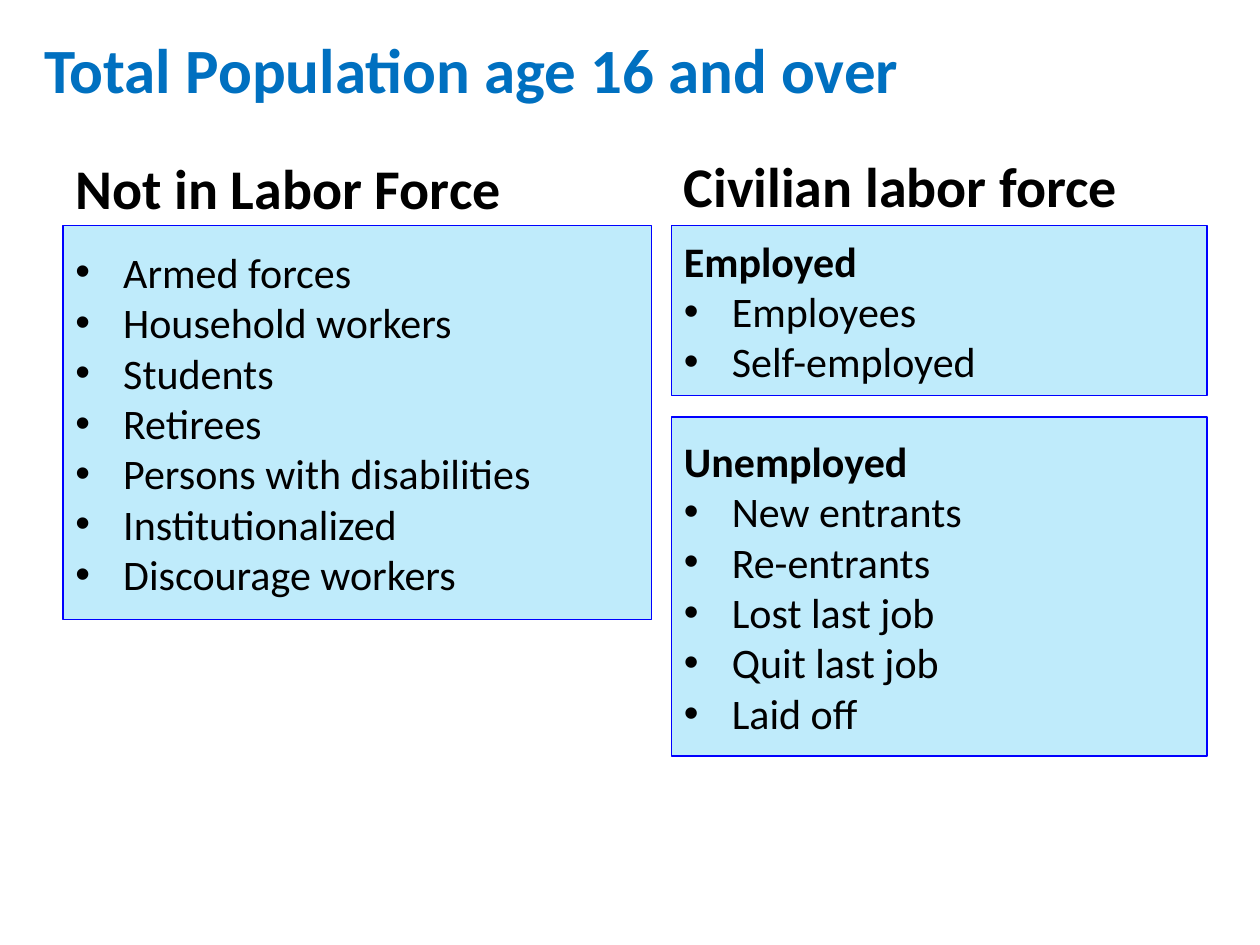
from lxml import etree
from pptx import Presentation
from pptx.dml.color import RGBColor
from pptx.enum import shapes, text
from pptx.oxml.ns import qn
from pptx.util import Inches, Pt

# Content
TITLE = "Total Population age 16 and over"
# Each column: left, width, heading, heading anchor, boxes of (height, subheading, items)
COLUMNS = [
    (0.5, 4.67, "Not in Labor Force", "TOP", [
        (3.13, None, ["Armed forces", "Household workers", "Students", "Retirees",
                      "Persons with disabilities", "Institutionalized",
                      "Discourage workers"]),
    ]),
    (5.33, 4.25, "Civilian labor force", "MIDDLE", [
        (1.35, "Employed", ["Employees", "Self-employed"]),
        (2.69, "Unemployed", ["New entrants", "Re-entrants", "Lost last job",
                              "Quit last job", "Laid off"]),
    ]),
]
COLORS = {"title": "0070C0", "text": "000000", "box": "00B0F0", "line": "0000FF"}
FONT = "Calibri"
HEAD_TOP, HEAD_HEIGHT, BOX_TOP, BOX_GAP = 1.17, 0.59, 1.79, 0.17
INDENT = Inches(0.38)


def rgb(name):
    return RGBColor.from_string(COLORS[name])


def write(p, words, size=24, bold=False, color="text", bullet=False):
    p.alignment = text.PP_ALIGN.LEFT
    p.space_before = Pt(0)
    r = p.add_run()
    r.text = words
    r.font.name, r.font.size, r.font.bold = FONT, Pt(size), bold
    r.font.color.rgb = rgb(color)
    if bullet:
        pPr = p._p.get_or_add_pPr()
        pPr.set("marL", str(INDENT))
        pPr.set("indent", str(-INDENT))
        etree.SubElement(pPr, qn("a:buFont")).set("typeface", "Arial")
        etree.SubElement(pPr, qn("a:buChar")).set("char", "•")


def set_frame(sp, anchor="MIDDLE"):
    tf = sp.text_frame
    tf.word_wrap = True
    tf.auto_size = text.MSO_AUTO_SIZE.SHAPE_TO_FIT_TEXT
    tf.vertical_anchor = text.MSO_ANCHOR[anchor]
    return tf


def add_box(s, left, top, width, height, subheading, items):
    sp = s.shapes.add_shape(shapes.MSO_SHAPE.RECTANGLE, Inches(left), Inches(top),
                            Inches(width), Inches(height))
    sp.shadow.inherit = False
    sp.fill.solid()
    sp.fill.fore_color.rgb = rgb("box")
    fill_color = sp._element.spPr.find(qn("a:solidFill"))[0]
    etree.SubElement(fill_color, qn("a:alpha")).set("val", "25000")
    sp.line.color.rgb = rgb("line")
    sp.line.width = Pt(0.75)
    tf = set_frame(sp)
    lines = [(subheading, {"bold": True})] if subheading else []
    lines += [(item, {"bullet": True}) for item in items]
    for i, (words, style) in enumerate(lines):
        write(tf.add_paragraph() if i else tf.paragraphs[0], words, **style)


def main():
    prs = Presentation()
    prs.slide_width, prs.slide_height = Inches(10), Inches(7.5)
    s = prs.slides.add_slide(prs.slide_layouts[5])

    # Title
    title = s.shapes.title
    title.left, title.top = Inches(0.25), Inches(0.22)
    title.width, title.height = Inches(8.25), Inches(0.65)
    write(set_frame(title).paragraphs[0], TITLE, size=36, bold=True, color="title")

    # Columns: a heading above stacked boxes
    for left, width, heading, anchor, boxes in COLUMNS:
        tb = s.shapes.add_textbox(Inches(left), Inches(HEAD_TOP),
                                  Inches(width), Inches(HEAD_HEIGHT))
        write(set_frame(tb, anchor).paragraphs[0], heading, size=32, bold=True)
        top = BOX_TOP
        for height, subheading, items in boxes:
            add_box(s, left, top, width, height, subheading, items)
            top += height + BOX_GAP

    prs.save("out.pptx")


if __name__ == "__main__":
    main()
